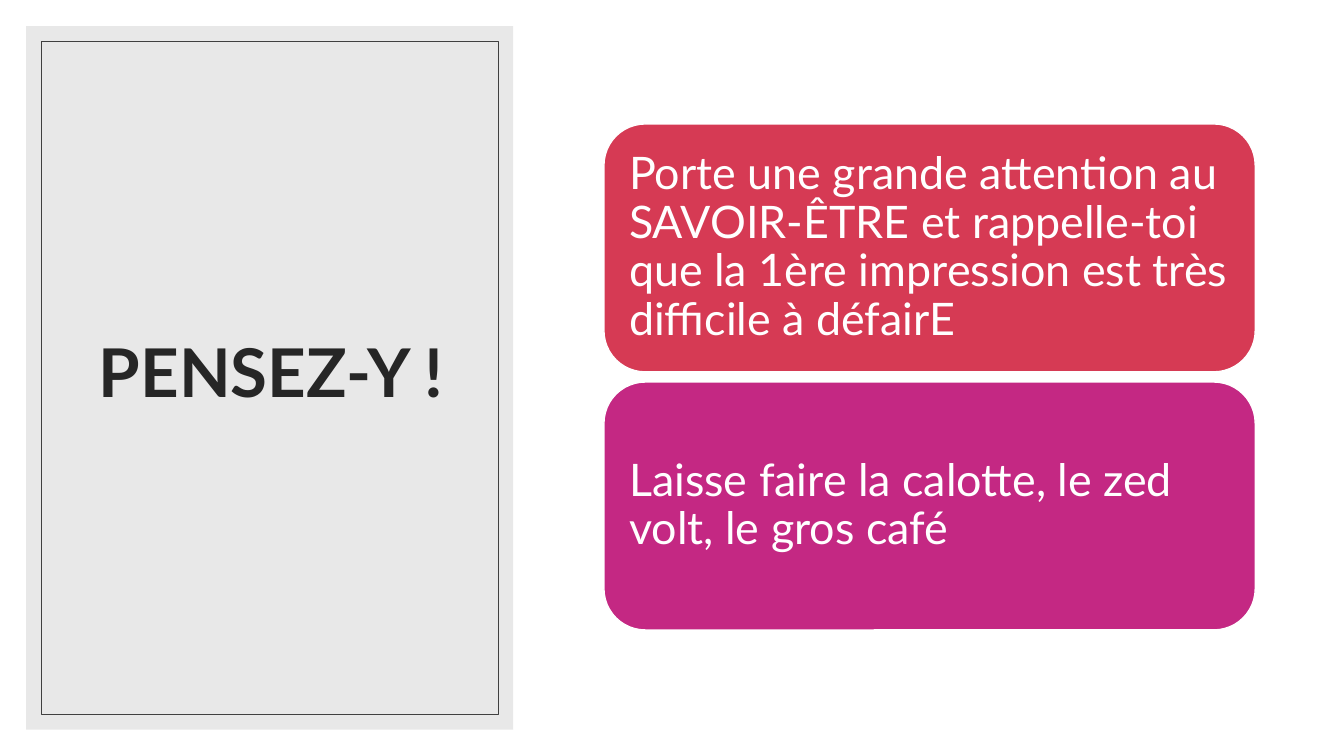
from pptx import Presentation
from pptx.dml.color import RGBColor
from pptx.enum.shapes import MSO_SHAPE
from pptx.enum.text import MSO_ANCHOR, PP_ALIGN
from pptx.oxml.ns import qn
from pptx.util import Inches, Pt
from lxml import etree

RECT = MSO_SHAPE.RECTANGLE
ROUNDED = MSO_SHAPE.ROUNDED_RECTANGLE
MIDDLE = MSO_ANCHOR.MIDDLE
LEFT, CENTER = PP_ALIGN.LEFT, PP_ALIGN.CENTER

THEME = {
    "font": "Lato",
    "title_size": 48,
    "card_size": 32,
    "title": "262626",
    "panel": "D9D9D9",
    "panel_alpha": 60,
    "frame": "404040",
    "white": "FFFFFF",
    "cards": ["D63A54", "C42883"],
}
WIDTH, HEIGHT = 13.33, 7.5
MARGIN = 0.26
FRAME_INSET = 0.15
PANEL_WIDTH = 4.83
PANEL_HEIGHT = HEIGHT - 2 * MARGIN
CARD_LEFT, CARD_TOP = 5.99, 1.23
CARD_WIDTH, CARD_HEIGHT, CARD_GAP = 6.46, 2.46, 0.1
CARD_PADDING = 0.13

ADVICE = [
    "Porte une grande attention au SAVOIR-ÊTRE et rappelle-toi que la 1ère impression est très difficile à défairE",
    "Laisse faire la calotte, le zed volt, le gros café",
]

prs = Presentation()
prs.slide_width, prs.slide_height = Inches(WIDTH), Inches(HEIGHT)
slide = prs.slides.add_slide(prs.slide_layouts[6])


def add_block(kind, left, top, width, height, fill=None, line=None, weight=1):
    block = slide.shapes.add_shape(kind, *map(Inches, (left, top, width, height)))
    block.shadow.inherit = False
    if fill:
        block.fill.solid()
        block.fill.fore_color.rgb = RGBColor.from_string(fill)
    else:
        block.fill.background()
    if line:
        block.line.color.rgb = RGBColor.from_string(line)
        block.line.width = Pt(weight)
    else:
        block.line.fill.background()
    return block


def write(holder, text, size, color, align, space_after, bold=False):
    frame = holder.text_frame
    frame.word_wrap = True
    frame.vertical_anchor = MIDDLE
    paragraph = frame.paragraphs[0]
    paragraph.text = text
    paragraph.alignment = align
    paragraph.line_spacing = 0.9
    paragraph.space_after = Pt(space_after)
    paragraph.font.name = THEME["font"]
    paragraph.font.size = Pt(size)
    paragraph.font.bold = bold
    paragraph.font.color.rgb = RGBColor.from_string(color)
    return frame


panel = add_block(RECT, MARGIN, MARGIN, PANEL_WIDTH, PANEL_HEIGHT, THEME["panel"])
panel_color = panel.element.spPr.find(qn("a:solidFill")).find(qn("a:srgbClr"))
etree.SubElement(panel_color, qn("a:alpha")).set("val", str(THEME["panel_alpha"] * 1000))

title = slide.shapes.add_textbox(*map(Inches, (0.63, 0.61, 4.12, 6.24)))
write(title, "PENSEZ-Y !", THEME["title_size"], THEME["title"], CENTER, 6, bold=True)

add_block(RECT, MARGIN + FRAME_INSET, MARGIN + FRAME_INSET,
          PANEL_WIDTH - 2 * FRAME_INSET, PANEL_HEIGHT - 2 * FRAME_INSET,
          line=THEME["frame"], weight=0.5)

for row, (advice, color) in enumerate(zip(ADVICE, THEME["cards"])):
    card_top = CARD_TOP + row * (CARD_HEIGHT + CARD_GAP)
    card = add_block(ROUNDED, CARD_LEFT, card_top, CARD_WIDTH, CARD_HEIGHT, color, THEME["white"])
    body = write(card, advice, THEME["card_size"], THEME["white"], LEFT, 0.35 * THEME["card_size"])
    body.margin_left = body.margin_right = Inches(CARD_PADDING)
    body.margin_top = body.margin_bottom = Inches(CARD_PADDING)

prs.save("out.pptx")
